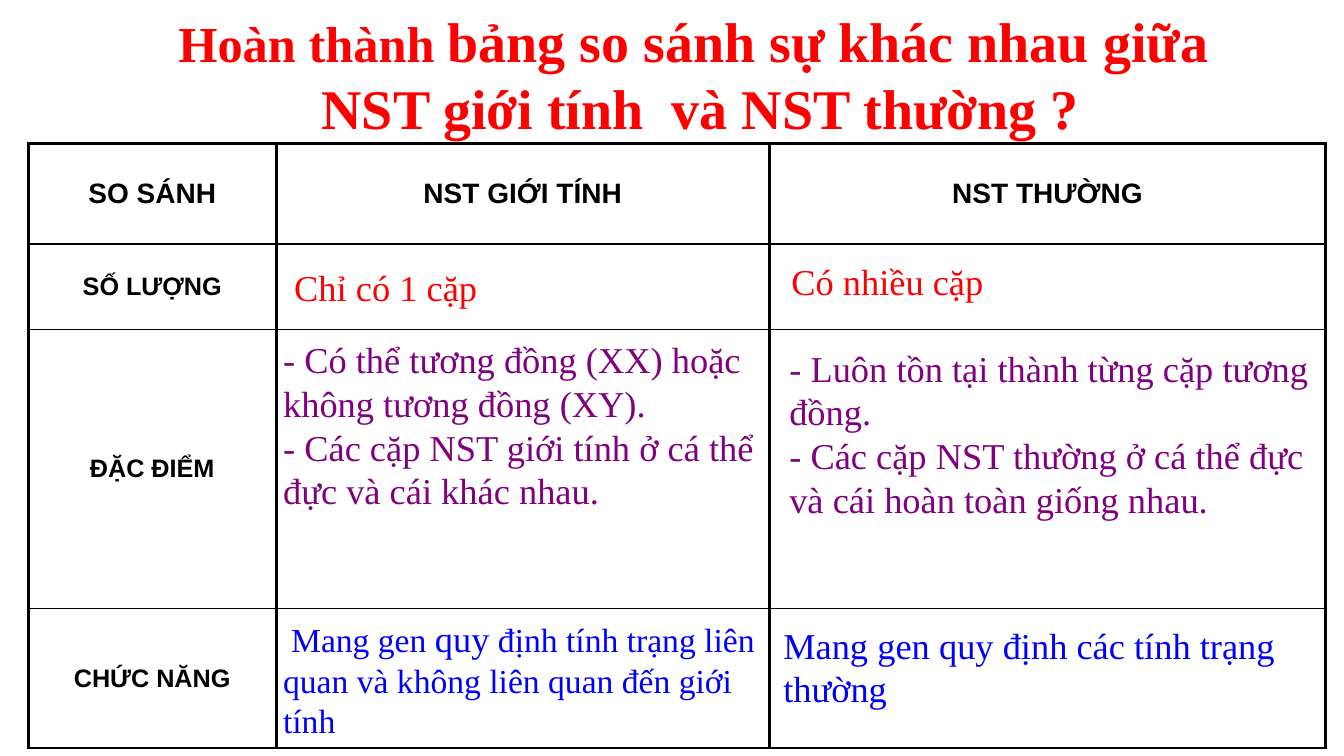
from pptx import Presentation
from pptx.dml.color import RGBColor
from pptx.enum.text import MSO_ANCHOR, MSO_AUTO_SIZE, PP_ALIGN
from pptx.util import Emu, Pt
from pptx.oxml.ns import qn
from lxml.etree import SubElement

SCALE = 9144  # EMU in one px, 100 px to the inch
SERIF, SANS = "Times New Roman", "Arial"
RED, PURPLE, BLUE, BLACK = "FF0000", "800080", "0000FF", "000000"

# Content: a paragraph is a list of (text, size)
TITLE = [
    [("Hoàn thành ", 36), ("bảng so sánh sự khác nhau giữa ", 40)],
    [("NST giới tính  và NST thường ?", 40)],
]
TITLE_PLACE = (28, 1, 1305, 145)
TITLE_SHIFT = 28  # left margin of the first title line

HEADINGS = ["SO SÁNH", "NST GIỚI TÍNH", "NST THƯỜNG"]
CRITERIA = ["SỐ LƯỢNG", "ĐẶC ĐIỂM", "CHỨC NĂNG"]
TABLE_LEFT, TABLE_TOP = 28, 142
COLUMNS = [246, 489, 552]
ROWS = [100, 85, 277, 138]
THICK, THIN = 2.25, 1

# Answers: place, colour, first-line indent, paragraphs
ANSWERS = [
    ((282, 258, 386, 53), RED, 0, [[("Chỉ có 1 cặp", 26)]]),
    ((775, 252, 524, 53), RED, 0, [[("Có nhiều cặp", 26)]]),
    ((271, 330, 504, 185), PURPLE, 0, [
        [("- Có thể tương đồng (XX) hoặc không tương đồng (XY).", 26)],
        [("- Các cặp NST giới tính ở cá thể đực và cái khác nhau.", 26)],
    ]),
    ((773, 338, 542, 185), PURPLE, 0, [
        [("- Luôn tồn tại thành từng cặp tương đồng.", 26)],
        [("- Các cặp NST thường ở cá thể đực và cái hoàn toàn giống nhau.", 26)],
    ]),
    ((271, 606, 496, 133), BLUE, 8, [
        [("Mang gen ", 24), ("quy", 26),
         (" định tính trạng liên quan và không liên quan đến giới tính", 24)],
    ]),
    ((767, 613, 532, 97), BLUE, 0, [[("Mang gen quy định các tính trạng thường", 26)]]),
]


def px(length):
    return Emu(length * SCALE)


def colour(value):
    return RGBColor.from_string(value)


def set_font(font, name, size, value, bold=False):
    font.name, font.size, font.bold = name, Pt(size), bold
    font.color.rgb = colour(value)


def write(frame, paragraphs, value, bold=False, align=PP_ALIGN.LEFT):
    frame.word_wrap = True
    frame.auto_size = MSO_AUTO_SIZE.NONE
    frame.vertical_anchor = MSO_ANCHOR.TOP
    for index, spans in enumerate(paragraphs):
        para = frame.paragraphs[0] if index == 0 else frame.add_paragraph()
        para.alignment = align
        base = spans[-1][1]
        set_font(para.font, SERIF, base, value, bold)
        for text, size in spans:
            span = para.add_run()
            span.text = text
            if size != base:
                span.font.size = Pt(size)


def add_border(cell, side, width):
    line = SubElement(cell._tc.get_or_add_tcPr(), qn("a:" + side), w=str(Pt(width)))
    fill = SubElement(line, qn("a:solidFill"))
    SubElement(fill, qn("a:srgbClr"), val=BLACK)


deck = Presentation()
deck.slide_width, deck.slide_height = px(1333), px(750)
page = deck.slides.add_slide(deck.slide_layouts[5])

# Title
title = page.shapes.title
title.left, title.top, title.width, title.height = map(px, TITLE_PLACE)
write(title.text_frame, TITLE, RED, bold=True, align=PP_ALIGN.CENTER)
first_line = title.text_frame.paragraphs[0]
first_line._p.get_or_add_pPr().set("marL", str(px(TITLE_SHIFT)))

# Comparison table
table = page.shapes.add_table(
    len(ROWS), len(COLUMNS), px(TABLE_LEFT), px(TABLE_TOP),
    px(sum(COLUMNS)), px(sum(ROWS))).table
table.first_row = table.horz_banding = False
for column, width in zip(table.columns, COLUMNS):
    column.width = px(width)
last = len(ROWS) - 1
for r, height in enumerate(ROWS):
    table.rows[r].height = px(height)
    for c in range(len(COLUMNS)):
        cell = table.cell(r, c)
        add_border(cell, "lnL", THICK)
        add_border(cell, "lnR", THICK)
        add_border(cell, "lnT", THICK if r == 0 else THIN)
        add_border(cell, "lnB", THICK if r == last else THIN)
        cell.fill.background()
        cell.vertical_anchor = MSO_ANCHOR.MIDDLE
        if r == 0 or c == 0:
            cell.text = HEADINGS[c] if r == 0 else CRITERIA[r - 1]
            para = cell.text_frame.paragraphs[0]
            para.alignment = PP_ALIGN.CENTER
            set_font(para.font, SANS, 20 if r == 0 else 18, BLACK, bold=True)

# Answers laid over the table
for place, value, indent, paragraphs in ANSWERS:
    box = page.shapes.add_textbox(*map(px, place))
    write(box.text_frame, paragraphs, value)
    if indent:
        box.text_frame.paragraphs[0]._p.get_or_add_pPr().set("indent", str(px(indent)))

deck.save("out.pptx")
